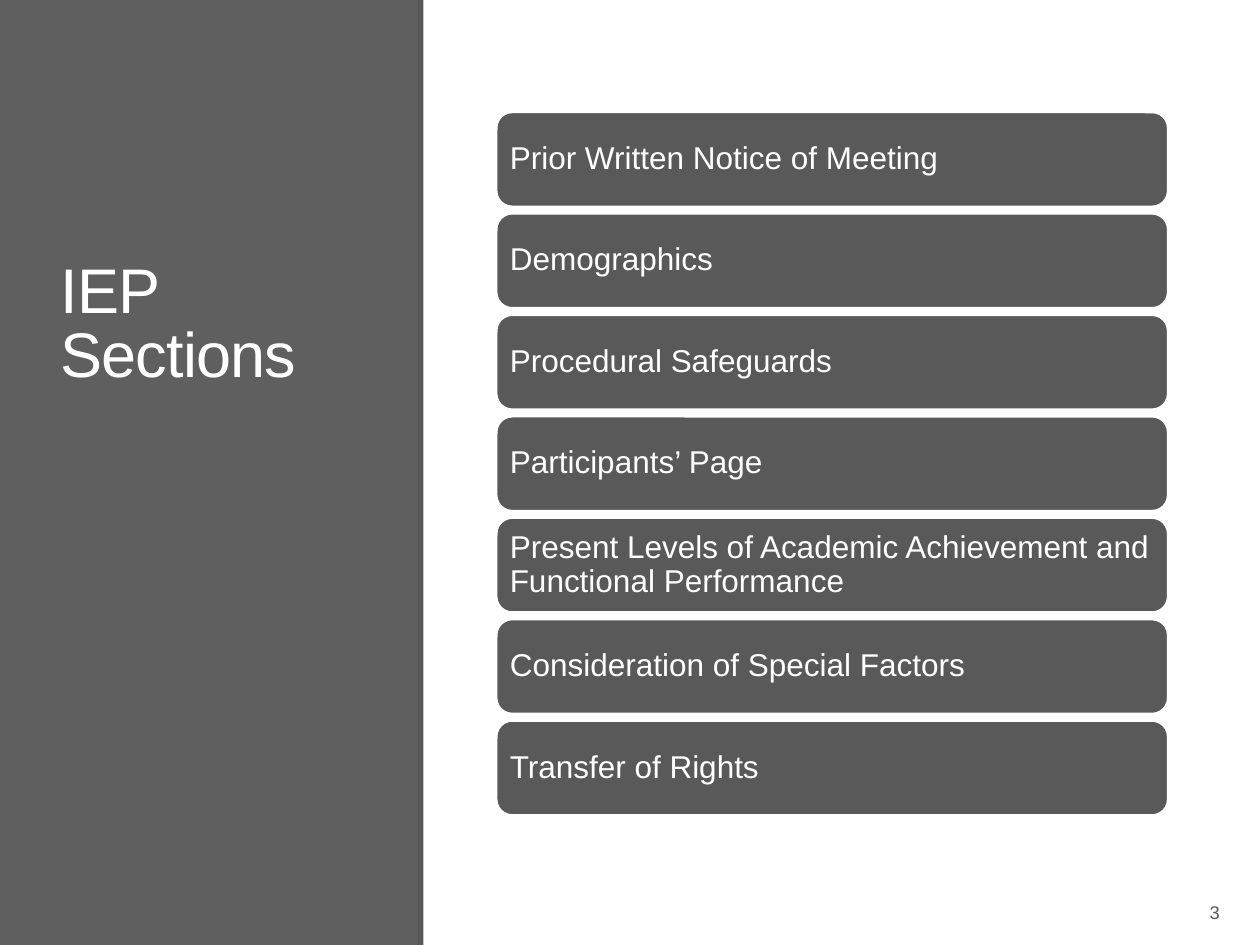
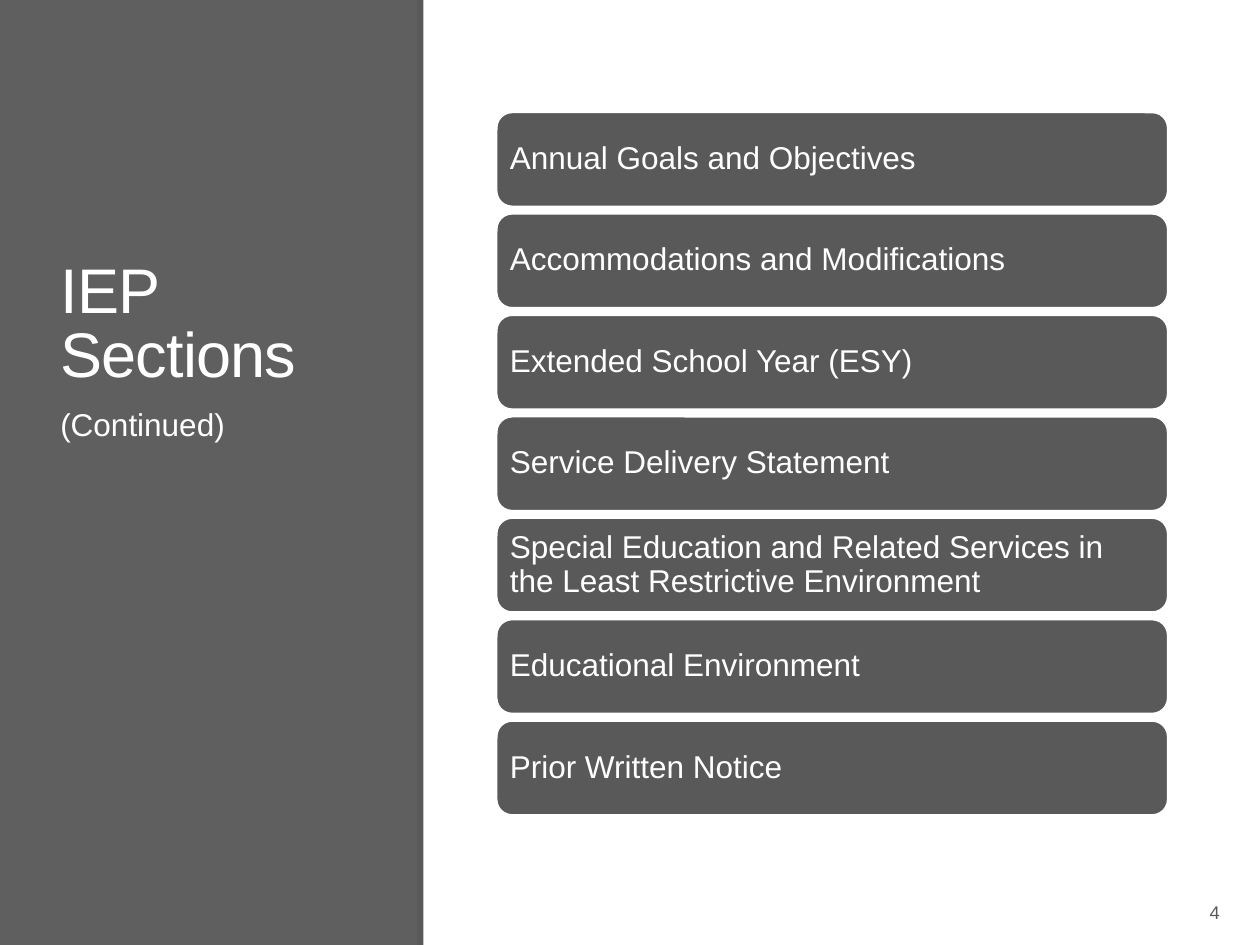
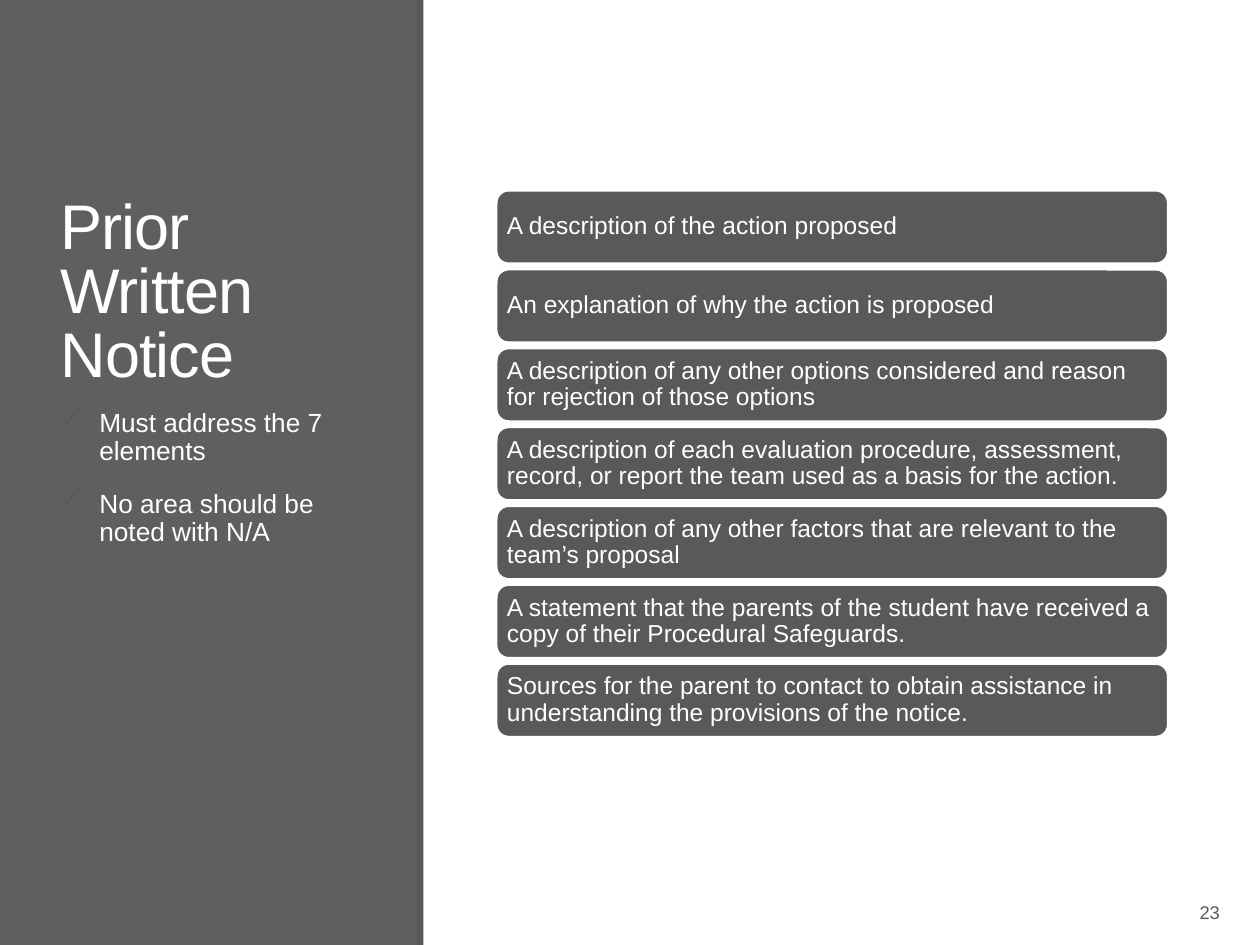
from typing import NamedTuple

import pptx
import pptx.dml.color
import pptx.enum.shapes
import pptx.enum.text
import pptx.oxml
import pptx.oxml.ns
import pptx.util
from pptx.dml.color import RGBColor

# Shared look
WHITE = RGBColor(0xFF, 0xFF, 0xFF)
PANEL = RGBColor(0x5F, 0x5F, 0x5F)
DARK = RGBColor(0x59, 0x59, 0x59)
FONT = "Arial"
ANCHOR = pptx.enum.text.MSO_ANCHOR
ALIGN = pptx.enum.text.PP_ALIGN
SHAPE = pptx.enum.shapes.MSO_SHAPE

# Grid of 100 columns by 75 rows of square cells
WIDTH = pptx.util.Inches(10)
HEIGHT = pptx.util.Inches(7.5)
CELL = WIDTH / 100


class Box(NamedTuple):
    col: float
    row: float
    cols: float
    rows: float

    def place(self) -> list[int]:
        return [round(side * CELL) for side in self]


class Look(NamedTuple):
    size: float
    color: RGBColor = WHITE
    line: float = 1.0
    before: float = 0
    after: float = 0
    align: ALIGN = ALIGN.LEFT


class Stack(NamedTuple):
    rows: float  # height of one card
    gap: float
    inset: float  # text margin in cells
    look: Look


class Page(NamedTuple):
    title: str
    number: str
    stack: Stack
    cards: list[str]
    notes: list[str] = []
    note: Look = Look(18, line=0.9, before=12, after=2)
    ticks: bool = False


BANDS = [(Box(0, 0, 33.2, 75), PANEL), (Box(33.1, 0, 0.5, 75), DARK)]
TITLE = Box(3.8, 6.5, 26.2, 25)
NOTES = Box(3.8, 32, 26.2, 37)
NUMBER = Box(87, 70.4, 10.8, 4)
CARD_COL, CARD_COLS, MIDDLE = 39.4, 53.3, 36.8
HANG = pptx.util.Inches(0.31)

HEAD = Look(36, line=0.85)
FOOT = Look(10.5, DARK, after=6, align=ALIGN.RIGHT)
TALL = Stack(7.5, 0.55, 0.7, Look(18, line=0.9, after=6.3))
SHORT = Stack(5.8, 0.46, 0.56, Look(14, line=0.9, after=4.9))

PAGES = [
    Page("IEP Sections", "3", TALL, [
        "Prior Written Notice of Meeting",
        "Demographics",
        "Procedural Safeguards",
        "Participants’ Page",
        "Present Levels of Academic Achievement and Functional Performance",
        "Consideration of Special Factors",
        "Transfer of Rights",
    ]),
    Page("IEP Sections", "4", TALL, [
        "Annual Goals and Objectives",
        "Accommodations and Modifications",
        "Extended School Year (ESY)",
        "Service Delivery Statement",
        "Special Education and Related Services in the Least Restrictive Environment",
        "Educational Environment",
        "Prior Written Notice",
    ], ["(Continued)"]),
    Page("Prior Written Notice", "23", SHORT, [
        "A description of the action proposed",
        "An explanation of why the action is proposed",
        "A description of any other options considered and reason for rejection of those options",
        "A description of each evaluation procedure, assessment, record, or report the team used "
        "as a basis for the action.",
        "A description of any other factors that are relevant to the team’s proposal",
        "A statement that the parents of the student have received a copy of their "
        "Procedural Safeguards.",
        "Sources for the parent to contact to obtain assistance in understanding the provisions "
        "of the notice.",
    ], ["Must address the 7 elements", "No area should be noted with N/A"],
        Look(15, line=0.9, before=12, after=2), True),
]


def write(frame, lines: list[str], look: Look, anchor: ANCHOR) -> None:
    """Fill a text frame, one paragraph a line, in one look."""
    frame.text = "\n".join(lines)
    frame.word_wrap = True
    frame.auto_size = pptx.enum.text.MSO_AUTO_SIZE.NONE
    frame.vertical_anchor = anchor
    for index, para in enumerate(frame.paragraphs):
        para.alignment = look.align
        para.line_spacing = look.line
        para.space_before = pptx.util.Pt(look.before if index else 0)
        para.space_after = pptx.util.Pt(look.after)
        for run in para.runs:
            run.font.name = FONT
            run.font.size = pptx.util.Pt(look.size)
            run.font.color.rgb = look.color


def add_tick(para) -> None:
    """Give a paragraph a hanging tick bullet."""
    props = para._p.get_or_add_pPr()
    props.set("marL", str(HANG))
    props.set("indent", str(-HANG))
    space = pptx.oxml.ns.nsdecls("a")
    for mark in (
        f'<a:buClr {space}><a:srgbClr val="{DARK}"/></a:buClr>',
        f'<a:buChar {space} char="✓"/>',
    ):
        props.append(pptx.oxml.parse_xml(mark))


def add_block(slide, kind: SHAPE, box: Box, fill: RGBColor):
    """Draw a plain filled shape."""
    shape = slide.shapes.add_shape(kind, *box.place())
    shape.shadow.inherit = False
    shape.fill.solid()
    shape.fill.fore_color.rgb = fill
    shape.line.fill.background()
    return shape


def add_bands(slide) -> None:
    """Put the side panel behind everything on the slide's layout."""
    tree = slide.slide_layout.shapes.element
    for index, (box, fill) in enumerate(BANDS):
        band = add_block(slide, SHAPE.RECTANGLE, box, fill)
        band.element.nvSpPr.cNvPr.id = 20 + index
        tree.insert(2 + index, band.element)


def add_title(slide, text: str) -> None:
    title = slide.shapes.title
    title.left, title.top, title.width, title.height = TITLE.place()
    write(title.text_frame, [text], HEAD, ANCHOR.BOTTOM)
    for run in title.text_frame.paragraphs[0].runs:
        run.font._element.set("spc", "-50")


def add_text(slide, box: Box, lines: list[str], look: Look, anchor: ANCHOR):
    frame = slide.shapes.add_textbox(*box.place()).text_frame
    write(frame, lines, look, anchor)
    return frame


def add_cards(slide, cards: list[str], stack: Stack) -> None:
    """Stack equal cards about the shared middle row."""
    pitch = stack.rows + stack.gap
    top = MIDDLE - (len(cards) * pitch - stack.gap) / 2
    for index, text in enumerate(cards):
        box = Box(CARD_COL, top + index * pitch, CARD_COLS, stack.rows)
        card = add_block(slide, SHAPE.ROUNDED_RECTANGLE, box, DARK)
        card.line.color.rgb = WHITE
        card.line.width = pptx.util.Pt(1.25)
        frame = card.text_frame
        inset = round(stack.inset * CELL)
        frame.margin_left = frame.margin_right = inset
        frame.margin_top = frame.margin_bottom = inset
        write(frame, [text], stack.look, ANCHOR.MIDDLE)


def main() -> None:
    deck = pptx.Presentation()
    deck.slide_width, deck.slide_height = WIDTH, HEIGHT
    layout = deck.slide_layouts.get_by_name("Title Only")
    for index, page in enumerate(PAGES):
        slide = deck.slides.add_slide(layout)
        if index == 0:
            add_bands(slide)
        add_title(slide, page.title)
        add_cards(slide, page.cards, page.stack)
        if page.notes:
            frame = add_text(slide, NOTES, page.notes, page.note, ANCHOR.TOP)
            if page.ticks:
                for para in frame.paragraphs:
                    add_tick(para)
        add_text(slide, NUMBER, [page.number], FOOT, ANCHOR.MIDDLE)
    deck.save("out.pptx")


if __name__ == "__main__":
    main()
